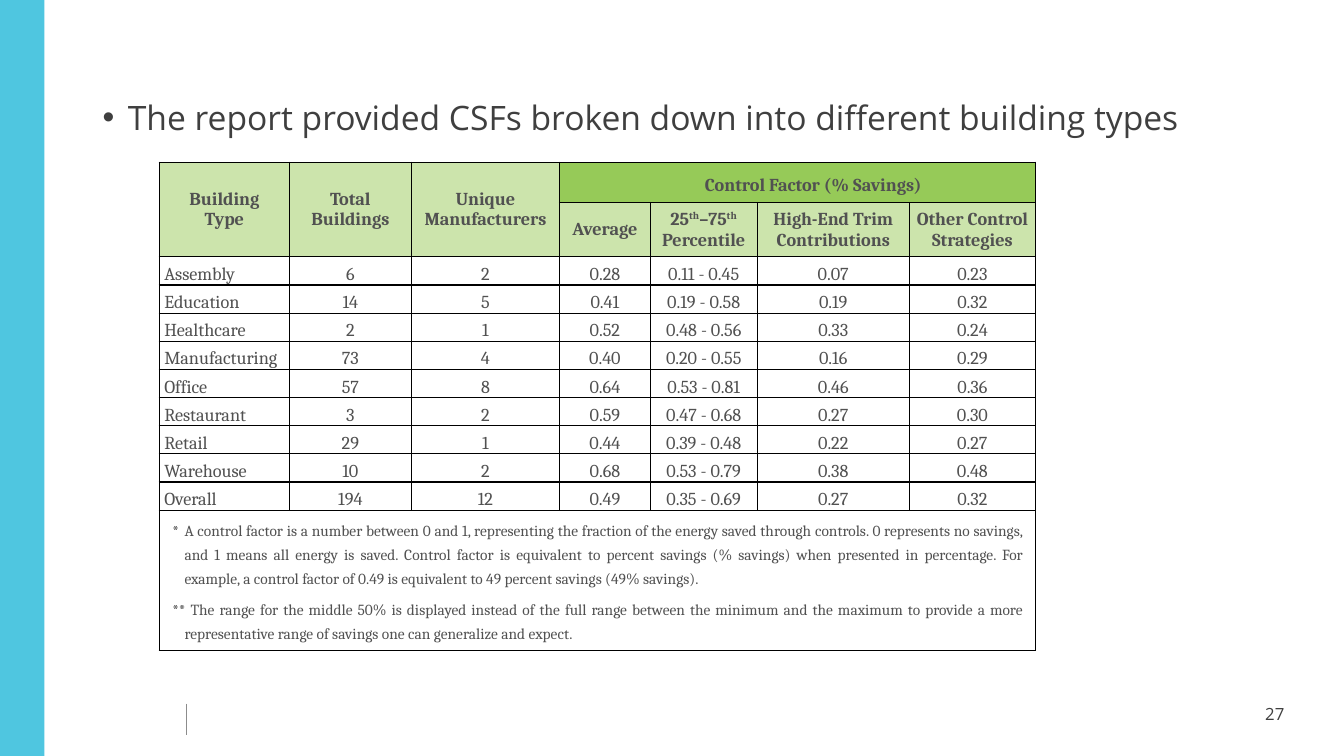
from dataclasses import dataclass

from lxml.etree import SubElement
from pptx import Presentation
from pptx.dml.color import RGBColor
from pptx.enum.shapes import MSO_CONNECTOR, MSO_SHAPE
from pptx.enum.text import MSO_ANCHOR, PP_ALIGN
from pptx.oxml.ns import qn
from pptx.util import Inches, Pt

CYAN = RGBColor(0x4F, 0xC6, 0xE0)
GREY = RGBColor(0x8C, 0x8C, 0x8C)
DARK = RGBColor(0x3F, 0x3F, 0x3F)
CELL_TEXT = RGBColor(0x51, 0x51, 0x51)
LIGHT_GREEN = RGBColor(0xCC, 0xE4, 0xAC)
GREEN = RGBColor(0x96, 0xCA, 0x58)
BLACK = RGBColor(0x00, 0x00, 0x00)

NARROW = (0.05, 0)
WIDE = (0.11, 0.06)


@dataclass
class Header:
    text: str  # parts between ^ marks are superscript
    row: int
    col: int
    rows: int = 1
    cols: int = 1
    fill: RGBColor = LIGHT_GREEN
    margins: tuple[float, float] = NARROW
    indent: float = 0
    spacing: float = 1


@dataclass
class Building:
    kind: str
    total: int
    makers: int
    average: float
    low: float
    high: float
    trim: float
    other: float

    def texts(self) -> list[str]:
        return [self.kind, str(self.total), str(self.makers), f"{self.average:.2f}",
                f"{self.low:.2f} - {self.high:.2f}", f"{self.trim:.2f}", f"{self.other:.2f}"]


HEADERS = [
    Header("Building Type", 0, 0, rows=2, margins=WIDE),
    Header("Total Buildings", 0, 1, rows=2, margins=WIDE),
    Header("Unique Manufacturers", 0, 2, rows=2, margins=WIDE),
    Header("Control Factor (% Savings)", 0, 3, cols=4, fill=GREEN, margins=WIDE,
           indent=0.31, spacing=1.35),
    Header("Average", 1, 3),
    Header("25^th^–75^th^ Percentile", 1, 4),
    Header("High-End Trim Contributions", 1, 5),
    Header("Other Control Strategies", 1, 6),
]
BUILDINGS = [
    Building("Assembly", 6, 2, 0.28, 0.11, 0.45, 0.07, 0.23),
    Building("Education", 14, 5, 0.41, 0.19, 0.58, 0.19, 0.32),
    Building("Healthcare", 2, 1, 0.52, 0.48, 0.56, 0.33, 0.24),
    Building("Manufacturing", 73, 4, 0.40, 0.20, 0.55, 0.16, 0.29),
    Building("Office", 57, 8, 0.64, 0.53, 0.81, 0.46, 0.36),
    Building("Restaurant", 3, 2, 0.59, 0.47, 0.68, 0.27, 0.30),
    Building("Retail", 29, 1, 0.44, 0.39, 0.48, 0.22, 0.27),
    Building("Warehouse", 10, 2, 0.68, 0.53, 0.79, 0.38, 0.48),
    Building("Overall", 194, 12, 0.49, 0.35, 0.69, 0.27, 0.32),
]
NOTES = [
    "*\tA control factor is a number between 0 and 1, representing the fraction of the energy "
    "saved through controls. 0 represents no savings, and 1 means all energy is saved. Control "
    "factor is equivalent to percent savings (% savings) when presented in percentage. For "
    "example, a control factor of 0.49 is equivalent to 49 percent savings (49% savings).",
    "** The range for the middle 50% is displayed instead of the full range between the minimum "
    "and the maximum to provide a more representative range of savings one can generalize and "
    "expect.",
]
COL_WIDTHS = [1.29, 1.21, 1.47, 0.9, 1.06, 1.51, 1.25]
ROW_HEIGHTS = [0.39, 0.54] + [0.27] * len(BUILDINGS) + [1.39]


def set_indent(p, left: float, first: float) -> None:
    pPr = p._p.get_or_add_pPr()
    pPr.set("marL", str(Inches(left)))
    pPr.set("indent", str(Inches(first)))


def style_font(font, name: str, size: float, color: RGBColor, bold: bool = False) -> None:
    font.name, font.size, font.bold = name, Pt(size), bold
    font.color.rgb = color


def set_margins(cell, margins: tuple[float, float]) -> None:
    cell.margin_left = cell.margin_right = Inches(margins[0])
    cell.margin_top = cell.margin_bottom = Inches(margins[1])


def add_borders(cell) -> None:
    tcPr = cell._tc.get_or_add_tcPr()
    for side in ("a:lnL", "a:lnR", "a:lnT", "a:lnB"):
        ln = SubElement(tcPr, qn(side), w=str(Pt(1)))
        SubElement(SubElement(ln, qn("a:solidFill")), qn("a:srgbClr"), val=str(BLACK))


def write_paragraph(p, text: str, align: PP_ALIGN, size: float, spacing: float,
                    after: float, bold: bool = False) -> None:
    p.alignment, p.line_spacing, p.space_after = align, spacing, Pt(after)
    for i, part in enumerate(text.split("^")):
        r = p.add_run()
        r.text = part
        style_font(r.font, "Cambria", size, CELL_TEXT, bold)
        if i % 2:
            r._r.get_or_add_rPr().set("baseline", "30000")


def add_savings_table(slide) -> None:
    table = slide.shapes.add_table(len(ROW_HEIGHTS), len(COL_WIDTHS), Inches(1.58), Inches(1.61),
                                   Inches(sum(COL_WIDTHS)), Inches(sum(ROW_HEIGHTS))).table
    table.first_row = table.horz_banding = False
    for column, width in zip(table.columns, COL_WIDTHS):
        column.width = Inches(width)
    for row, height in zip(table.rows, ROW_HEIGHTS):
        row.height = Inches(height)
    for cell in table.iter_cells():
        add_borders(cell)
        cell.fill.background()
        set_margins(cell, NARROW)

    # Header rows
    for h in HEADERS:
        cell = table.cell(h.row, h.col)
        if h.rows * h.cols > 1:
            cell.merge(table.cell(h.row + h.rows - 1, h.col + h.cols - 1))
        cell.fill.solid()
        cell.fill.fore_color.rgb = h.fill
        cell.vertical_anchor = MSO_ANCHOR.MIDDLE
        set_margins(cell, h.margins)
        p = cell.text_frame.paragraphs[0]
        set_indent(p, h.indent, 0)
        write_paragraph(p, h.text, PP_ALIGN.CENTER, 13, h.spacing, 1, bold=True)

    # Building rows
    for i, building in enumerate(BUILDINGS, start=2):
        for j, text in enumerate(building.texts()):
            align = PP_ALIGN.CENTER if j else PP_ALIGN.JUSTIFY
            write_paragraph(table.cell(i, j).text_frame.paragraphs[0], text, align, 13, 1.35, 0.5)

    # Footnotes
    last = len(ROW_HEIGHTS) - 1
    cell = table.cell(last, 0)
    cell.merge(table.cell(last, len(COL_WIDTHS) - 1))
    set_margins(cell, WIDE)
    tf = cell.text_frame
    for i, note in enumerate(NOTES):
        p = tf.add_paragraph() if i else tf.paragraphs[0]
        set_indent(p, 0.14, -0.12)
        write_paragraph(p, note, PP_ALIGN.JUSTIFY, 11, 1.35, 2.4)
        if i:
            p.space_before = Pt(2.4)


def add_text(slide, text: str, left: float, top: float, width: float, height: float,
             size: float, bullet: bool = False) -> None:
    tf = slide.shapes.add_textbox(Inches(left), Inches(top), Inches(width), Inches(height)).text_frame
    tf.word_wrap = True
    p = tf.paragraphs[0]
    p.text = text
    if bullet:
        set_indent(p, 0.25, -0.25)
        pPr = p._p.get_or_add_pPr()
        SubElement(pPr, qn("a:buFont"), typeface="Arial")
        SubElement(pPr, qn("a:buChar"), char="•")
    style_font(p.runs[0].font, "Open Sans", size, DARK)


def main() -> None:
    prs = Presentation()
    prs.slide_width, prs.slide_height = Inches(13.33), Inches(7.5)
    slide = prs.slides.add_slide(prs.slide_layouts[6])

    # Side band and footer rule
    band = slide.shapes.add_shape(MSO_SHAPE.RECTANGLE, 0, 0, Inches(0.44), prs.slide_height)
    band.shadow.inherit = False
    band.fill.solid()
    band.fill.fore_color.rgb = CYAN
    band.line.fill.background()
    rule = slide.shapes.add_connector(MSO_CONNECTOR.STRAIGHT, Inches(1.85), Inches(6.98),
                                      Inches(1.85), Inches(7.29))
    rule.line.color.rgb, rule.line.width = GREY, Pt(1)
    SubElement(rule._element.spPr, qn("a:effectLst"))

    # Content
    add_savings_table(slide)
    add_text(slide, "27", 12.45, 6.93, 0.56, 0.4, 12)
    add_text(slide, "The report provided CSFs broken down into different building types",
             0.92, 0.91, 11.54, 5.42, 24, bullet=True)
    prs.save("out.pptx")


if __name__ == "__main__":
    main()
